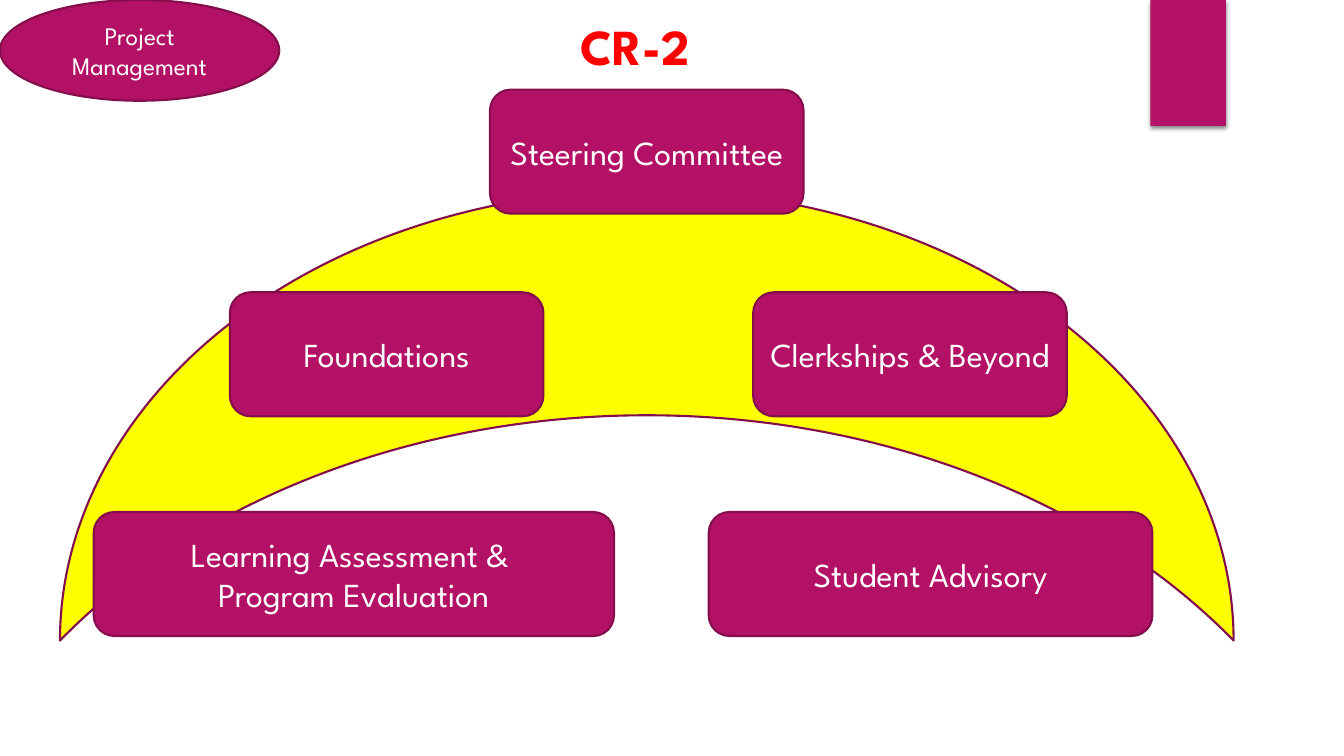
from lxml import etree
from pptx import Presentation
from pptx.dml.color import RGBColor
from pptx.enum import shapes, text
from pptx.oxml import ns
from pptx.util import Inches, Pt

# Content: lines, left, top, width
COMMITTEES = [
    (["Steering Committee"], 4.86, 0.89, 3.11),
    (["Clerkships & Beyond"], 7.47, 2.9, 3.11),
    (["Foundations"], 2.28, 2.9, 3.11),
    (["Learning Assessment & ", "Program Evaluation"], 0.93, 5.08, 5.16),
    (["Student Advisory"], 7.03, 5.08, 4.4),
]
COMMITTEE_HEIGHT = 1.23
MANAGEMENT = ["Project Management"]
TITLE = "CR-2"

FONT = "League Spartan"
COLORS = {"magenta": "B31166", "outline": "840D4B", "arch": "FFFF00",
          "label": "FFFFFF", "title": "FF0000", "shadow": "000000"}
KINDS = shapes.MSO_SHAPE


def color(name):
    return RGBColor.from_string(COLORS[name])


def add_shape(kind, left, top, width, height, fill="magenta", outlined=True):
    shape = page.shapes.add_shape(
        kind, Inches(left), Inches(top), Inches(width), Inches(height))
    shape.shadow.inherit = False
    shape.fill.solid()
    shape.fill.fore_color.rgb = color(fill)
    if outlined:
        shape.line.color.rgb = color("outline")
        shape.line.width = Pt(1.5)
    else:
        shape.line.fill.background()
    return shape


def style(para, size, name, bold=False):
    para.font.name = FONT
    para.font.size = Pt(size)
    para.font.bold = bold
    para.font.color.rgb = color(name)


def add_label(shape, lines, size):
    frame = shape.text_frame
    frame.word_wrap = True
    frame.vertical_anchor = text.MSO_ANCHOR.MIDDLE
    frame.text = "\n".join(lines)
    for para in frame.paragraphs:
        para.alignment = text.PP_ALIGN.CENTER
        style(para, size, "label")


deck = Presentation()
deck.slide_width, deck.slide_height = Inches(13.33), Inches(7.5)
page = deck.slides.add_slide(deck.slide_layouts[6])

# Corner tab with a soft shadow below
tab = add_shape(KINDS.RECTANGLE, 11.41, 0, 0.75, 1.25, outlined=False)
effects = tab._element.spPr.find(ns.qn("a:effectLst"))
shadow = etree.SubElement(
    effects, ns.qn("a:outerShdw"), blurRad=str(Pt(3)), dist=str(Pt(2)),
    dir="5400000", algn="t", rotWithShape="0")
shade = etree.SubElement(shadow, ns.qn("a:srgbClr"), val=COLORS["shadow"])
etree.SubElement(shade, ns.qn("a:alpha"), val="45000")

# Arch behind the committees
arch = add_shape(KINDS.MOON, 4.18, -1.7, 4.47, 11.64, fill="arch")
arch.rotation = 90

# Committees
for lines, left, top, width in COMMITTEES:
    box = add_shape(KINDS.ROUNDED_RECTANGLE, left, top, width, COMMITTEE_HEIGHT)
    add_label(box, lines, 24)

# Project management
add_label(add_shape(KINDS.OVAL, 0, 0, 2.77, 1), MANAGEMENT, 18)

# Title
title = page.shapes.add_textbox(Inches(5.66), Inches(0.1), Inches(1.51), Inches(0.77))
title.text_frame.word_wrap = True
title.text_frame.text = TITLE
style(title.text_frame.paragraphs[0], 36, "title", bold=True)

deck.save("out.pptx")
